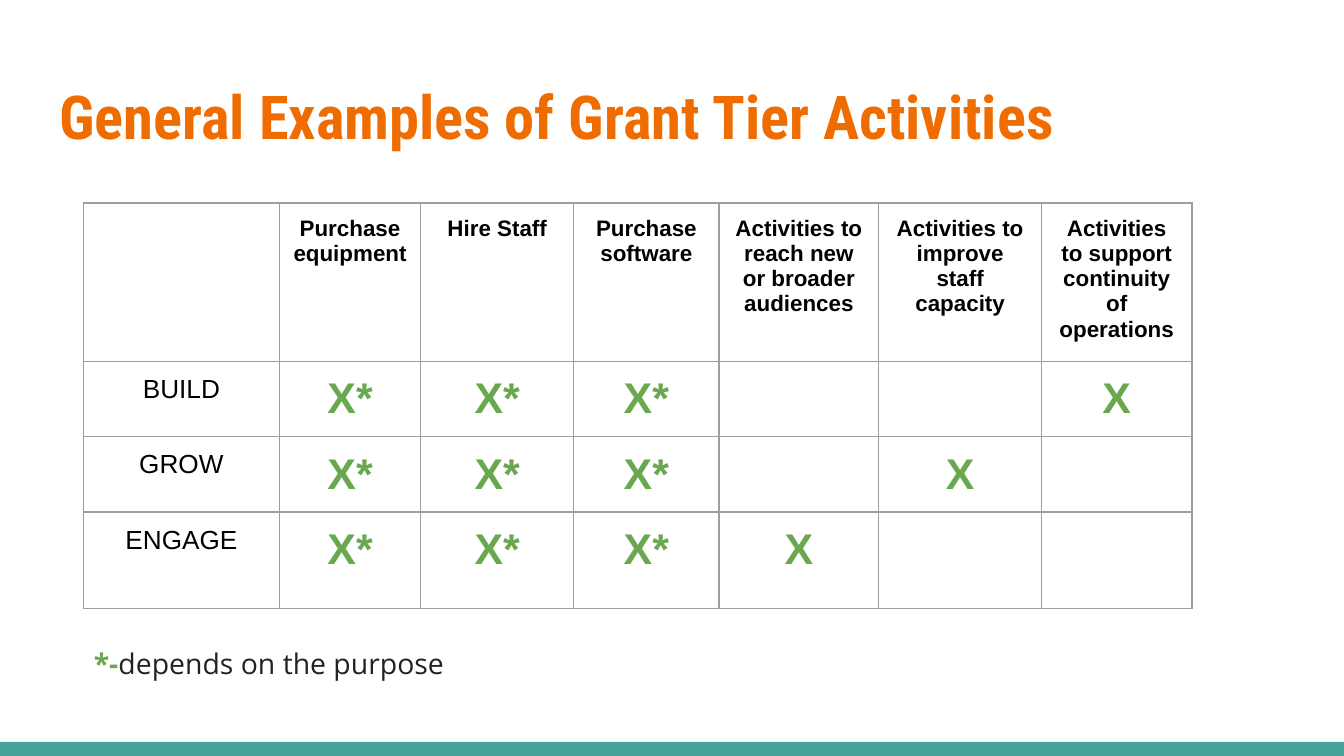
from lxml import etree
from pptx import Presentation
from pptx.dml.color import RGBColor
from pptx.enum.shapes import MSO_SHAPE
from pptx.enum.text import MSO_ANCHOR, PP_ALIGN
from pptx.oxml.ns import qn
from pptx.util import Inches, Pt

RECTANGLE = MSO_SHAPE.RECTANGLE
TOP = MSO_ANCHOR.TOP
LEFT, CENTER = PP_ALIGN.LEFT, PP_ALIGN.CENTER
TITLE_ONLY = 5
PAGE_WIDTH = 10
PAGE_HEIGHT = PAGE_WIDTH * 9 / 16

COLORS = {
    "title": "EF6C00",
    "bar": "47A39A",
    "mark": "6AA84F",
    "label": "000000",
    "note": "222222",
    "border": "9E9E9E",
    "page": "FFFFFF",
}
TITLE = "General Examples of Grant Tier Activities"
HEADERS = [
    "",
    "Purchase equipment",
    "Hire Staff",
    "Purchase software",
    "Activities to reach new or broader audiences",
    "Activities to improve staff capacity",
    "Activities to support continuity of operations",
]
TIERS = [
    ("BUILD", "X*", "X*", "X*", "", "", "X"),
    ("GROW", "X*", "X*", "X*", "", "X", ""),
    ("ENGAGE", "X*", "X*", "X*", "X", "", ""),
]
COLUMN_WIDTHS = [1.46, 1.05, 1.14, 1.08, 1.19, 1.21, 1.12]
ROW_HEIGHTS = [1.18, 0.56, 0.56, 0.72]
HEADER_STYLE = {"size": 12, "color": "label", "bold": True}
LABEL_STYLE = {"size": 14, "color": "label"}
MARK_STYLE = {"size": 23, "color": "mark", "bold": True}


def add_span(para, text, size, color, font="Arial", bold=False, align=LEFT):
    para.alignment = align
    span = para.add_run()
    span.text = text
    span.font.name = font
    span.font.size = Pt(size)
    span.font.bold = bold
    span.font.color.rgb = RGBColor.from_string(COLORS[color])


def set_margins(holder):
    holder.margin_left = holder.margin_right = Inches(0.1)
    holder.margin_top = holder.margin_bottom = Inches(0.1)


def set_frame(frame):
    frame.word_wrap = True
    frame.vertical_anchor = TOP
    set_margins(frame)


def format_cell(cell):
    set_margins(cell)
    properties = cell._tc.get_or_add_tcPr()
    for side in ("a:lnL", "a:lnR", "a:lnT", "a:lnB"):
        line = etree.SubElement(properties, qn(side), w=str(Pt(0.75)))
        fill = etree.SubElement(line, qn("a:solidFill"))
        etree.SubElement(fill, qn("a:srgbClr"), val=COLORS["border"])
    cell.fill.background()


def add_tier_table(page):
    rows = [HEADERS, *TIERS]
    table = page.shapes.add_table(
        len(rows), len(HEADERS), Inches(0.62), Inches(1.51),
        Inches(sum(COLUMN_WIDTHS)), Inches(sum(ROW_HEIGHTS)),
    ).table
    table.first_row = table.horz_banding = False
    for column, width in zip(table.columns, COLUMN_WIDTHS):
        column.width = Inches(width)
    for row, height in zip(table.rows, ROW_HEIGHTS):
        row.height = Inches(height)
    for row_index, texts in enumerate(rows):
        for column_index, text in enumerate(texts):
            cell = table.cell(row_index, column_index)
            format_cell(cell)
            if row_index == 0:
                style = HEADER_STYLE
            else:
                style = MARK_STYLE if column_index else LABEL_STYLE
            if text:
                add_span(cell.text_frame.paragraphs[0], text, align=CENTER, **style)


def main():
    deck = Presentation()
    deck.slide_width, deck.slide_height = Inches(PAGE_WIDTH), Inches(PAGE_HEIGHT)
    page = deck.slides.add_slide(deck.slide_layouts[TITLE_ONLY])
    page.background.fill.solid()
    page.background.fill.fore_color.rgb = RGBColor.from_string(COLORS["page"])

    bar = page.shapes.add_shape(
        RECTANGLE, 0, Inches(5.52), deck.slide_width, Inches(0.11))
    bar.shadow.inherit = False
    bar.fill.solid()
    bar.fill.fore_color.rgb = RGBColor.from_string(COLORS["bar"])
    bar.line.fill.background()

    title = page.shapes.title
    title.left, title.top = Inches(0.34), Inches(0.49)
    title.width, title.height = Inches(9.32), Inches(0.77)
    set_frame(title.text_frame)
    add_span(title.text_frame.paragraphs[0], TITLE, size=32.4, color="title",
             font="Roboto Condensed", bold=True)

    add_tier_table(page)

    note = page.shapes.add_textbox(
        Inches(0.6), Inches(4.71), Inches(3.8), Inches(0.33))
    set_frame(note.text_frame)
    para = note.text_frame.paragraphs[0]
    add_span(para, "*-", size=15.2, color="mark", font="Open Sans", bold=True)
    add_span(para, "depends on the purpose", size=15.2, color="note", font="Open Sans")

    deck.save("out.pptx")


if __name__ == "__main__":
    main()
